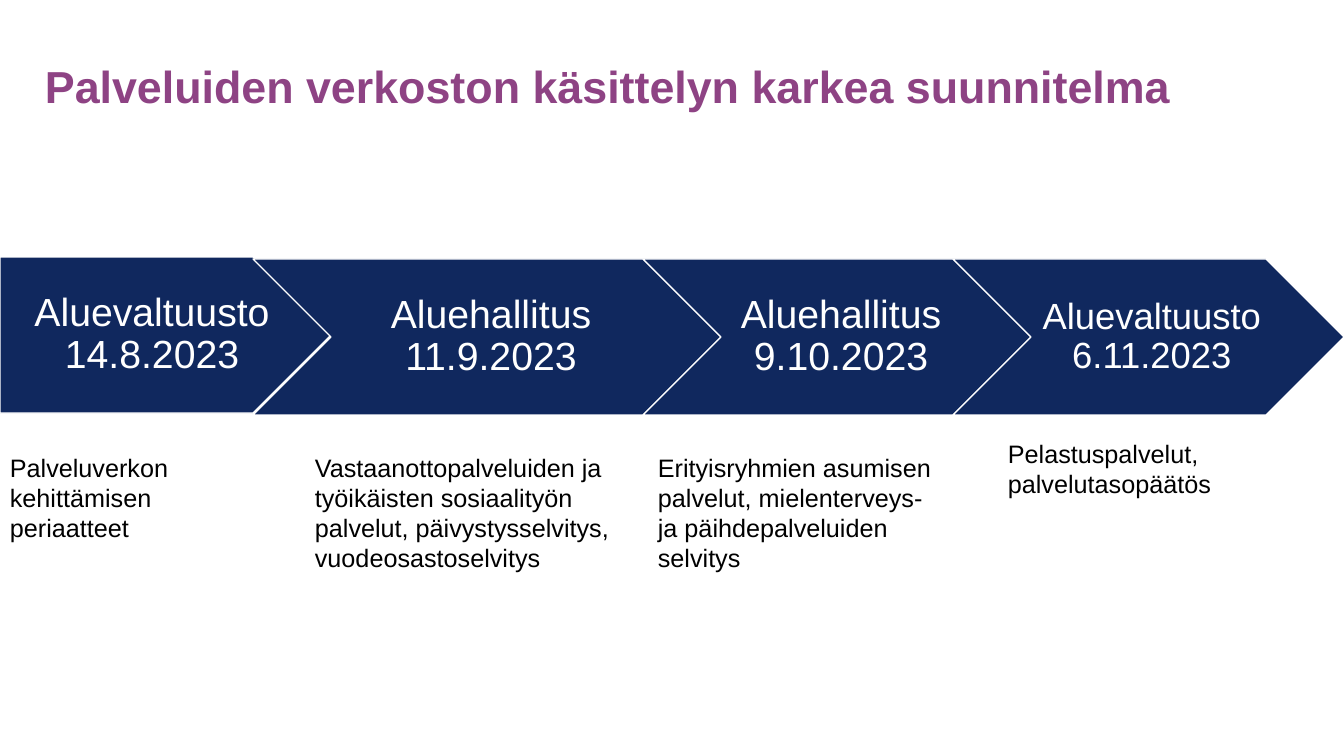
from dataclasses import dataclass

from pptx import Presentation
from pptx import util as u
from pptx.dml.color import RGBColor
from pptx.enum import shapes, text

TITLE = "Palveluiden verkoston käsittelyn karkea suunnitelma"
# label, width, top, left inset, size in points
STEPS = [
    ("Aluevaltuusto 14.8.2023", 331, 257, 16, 28),
    ("Aluehallitus 11.9.2023", 468, 259, 12, 28),
    ("Aluehallitus 9.10.2023", 388, 259, 12, 28),
    ("Aluevaltuusto 6.11.2023", 391, 259, 11, 26),
]
# text, left, top, width, height
NOTES = [
    ("Palveluverkon kehittämisen periaatteet", 0, 447, 275, 102),
    ("Vastaanottopalveluiden ja työikäisten sosiaalityön palvelut, "
     "päivystysselvitys, vuodeosastoselvitys", 305, 447, 357, 132),
    ("Erityisryhmien asumisen palvelut, mielenterveys- ja "
     "päihdepalveluiden selvitys", 648, 447, 309, 132),
    ("Pelastuspalvelut, palvelutasopäätös", 998, 433, 254, 72),
]
STEP_H = 156
TIP = STEP_H // 2  # depth of each arrow point


@dataclass(frozen=True)
class Theme:
    font: str = "Arial"
    navy: str = "10285E"
    plum: str = "8E4384"
    white: str = "FFFFFF"
    black: str = "000000"
    title: int = 32
    note: int = 18
    line: float = 0.85


theme = Theme()


def px(n):
    return u.Emu(round(n * 914400 / 100.8))


def write(shape, words, size, color, bold=False):
    frame = shape.text_frame
    frame.word_wrap = True
    para = frame.paragraphs[0]
    para.text = words
    font = para.font
    font.name, font.size, font.bold = theme.font, u.Pt(size), bold
    font.color.rgb = RGBColor.from_string(color)
    return frame, para


def add_box(slide, words, left, top, width, height, size, color, bold=False):
    box = slide.shapes.add_textbox(px(left), px(top), px(width), px(height))
    write(box, words, size, color, bold)


def add_step(slide, kind, left, label, width, top, inset, size):
    step = slide.shapes.add_shape(kind, px(left), px(top), px(width), px(STEP_H))
    step.shadow.inherit = False
    step.fill.solid()
    step.fill.fore_color.rgb = RGBColor.from_string(theme.navy)
    step.line.color.rgb = RGBColor.from_string(theme.white)
    step.line.width = u.Pt(theme.line)
    frame, para = write(step, label, size, theme.white)
    frame.margin_left, frame.margin_right = px(inset), px(4)
    frame.margin_top = frame.margin_bottom = px(8)
    frame.vertical_anchor = text.MSO_ANCHOR.MIDDLE
    para.alignment = text.PP_ALIGN.CENTER
    para.line_spacing = 0.9


def main():
    deck = Presentation()
    deck.slide_width, deck.slide_height = px(1344), px(756)
    slide = deck.slides.add_slide(deck.slide_layouts[6])

    # Arrow band: each step starts one tip before the last one ends
    left = 0
    kind = shapes.MSO_SHAPE.PENTAGON
    for step in STEPS:
        add_step(slide, kind, left, *step)
        left += step[1] - TIP
        kind = shapes.MSO_SHAPE.CHEVRON

    # Title
    add_box(slide, TITLE, 35, 54, 1274, 65, theme.title, theme.plum, True)

    # Notes under the steps
    for note in NOTES:
        add_box(slide, *note, theme.note, theme.black)

    deck.save("out.pptx")


if __name__ == "__main__":
    main()
